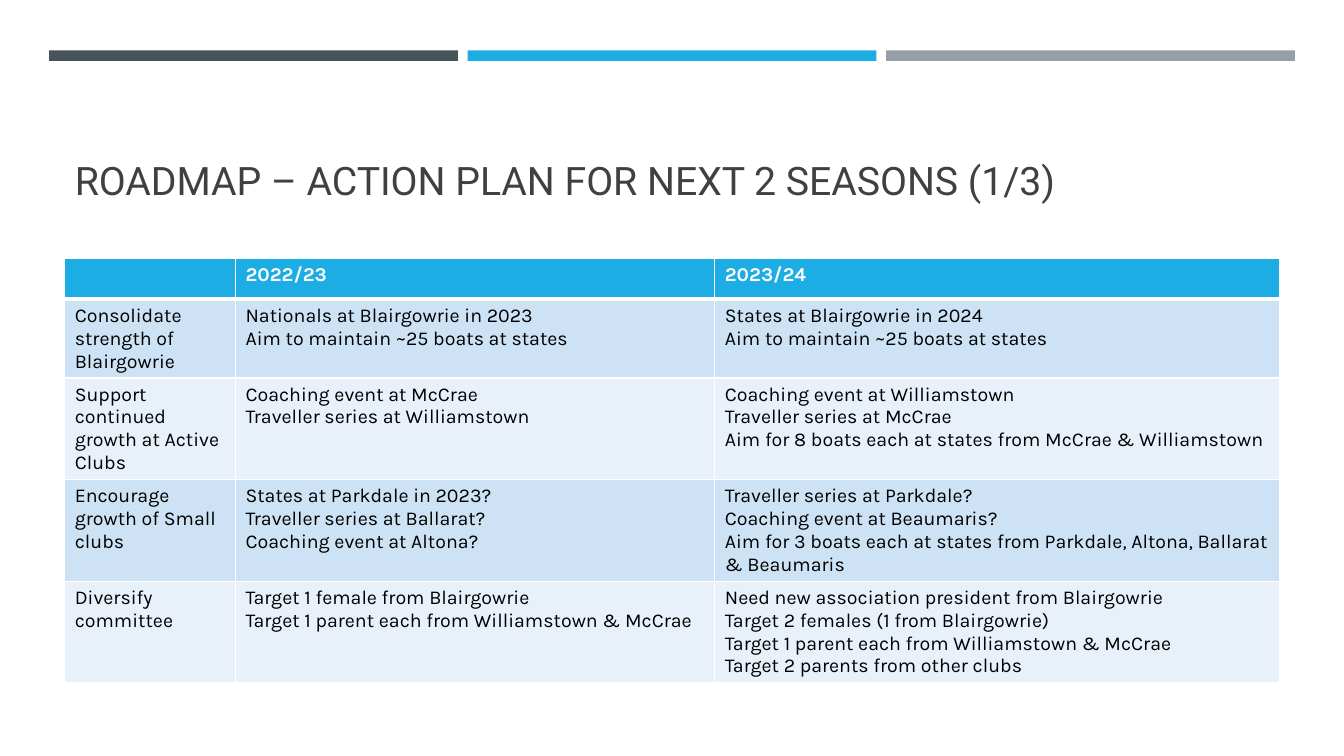
from lxml import etree
from pptx import Presentation
from pptx.dml.color import RGBColor
from pptx.enum import shapes, text
from pptx.oxml.ns import qn
from pptx.util import Pt

SLATE = RGBColor(0x46, 0x53, 0x59)
BLUE = RGBColor(0x1C, 0xAD, 0xE4)
GREY = RGBColor(0x96, 0x9F, 0xA7)
TITLE = RGBColor(0x40, 0x40, 0x40)
BAND_DARK = RGBColor(0xCD, 0xE3, 0xF5)
BAND_LIGHT = RGBColor(0xE8, 0xF1, 0xFA)
WHITE = RGBColor(0xFF, 0xFF, 0xFF)
BLACK = RGBColor(0, 0, 0)


def write(tf, content, font="Karla", size=14, color=BLACK, bold=False):
    for i, line in enumerate(content.split("\n")):
        p = tf.paragraphs[0] if i == 0 else tf.add_paragraph()
        p.alignment = text.PP_ALIGN.LEFT
        r = p.add_run()
        r.text = line
        r.font.name, r.font.size = font, Pt(size)
        r.font.color.rgb, r.font.bold = color, bold


def add_border(cell, side, width):
    ln = etree.SubElement(cell._tc.get_or_add_tcPr(), qn(f"a:{side}"), w=str(Pt(width)))
    fill = etree.SubElement(ln, qn("a:solidFill"))
    etree.SubElement(fill, qn("a:srgbClr"), val=str(WHITE))


prs = Presentation()
prs.slide_width, prs.slide_height = Pt(960), Pt(540)
s = prs.slides.add_slide(prs.slide_layouts[5])

# Three bars across the top
for i, color in enumerate((SLATE, BLUE, GREY)):
    sp = s.shapes.add_shape(shapes.MSO_SHAPE.RECTANGLE,
                            Pt(35 + 299 * i), Pt(36), Pt(292), Pt(7.5))
    sp.shadow.inherit = False
    sp.fill.solid()
    sp.fill.fore_color.rgb = color
    sp.line.fill.background()

# Title
title = s.shapes.title
title.left, title.top, title.width, title.height = Pt(46.2), Pt(55.4), Pt(868), Pt(93.6)
tf = title.text_frame
tf.word_wrap = True
tf.auto_size = text.MSO_AUTO_SIZE.NONE
tf.vertical_anchor = text.MSO_ANCHOR.BOTTOM
write(tf, "ROADMAP – ACTION PLAN FOR NEXT 2 SEASONS (1/3)", font="Roboto", size=28, color=TITLE)

# Action plan table
plan = [
    ("", "2022/23", "2023/24"),
    ("Consolidate strength of Blairgowrie",
     "Nationals at Blairgowrie in 2023\nAim to maintain ~25 boats at states",
     "States at Blairgowrie in 2024\nAim to maintain ~25 boats at states"),
    ("Support continued growth at Active Clubs",
     "Coaching event at McCrae\nTraveller series at Williamstown",
     "Coaching event at Williamstown\nTraveller series at McCrae\n"
     "Aim for 8 boats each at states from McCrae & Williamstown"),
    ("Encourage growth of Small clubs",
     "States at Parkdale in 2023?\nTraveller series at Ballarat?\nCoaching event at Altona?",
     "Traveller series at Parkdale?\nCoaching event at Beaumaris?\n"
     "Aim for 3 boats each at states from Parkdale, Altona, Ballarat & Beaumaris"),
    ("Diversify committee",
     "Target 1 female from Blairgowrie\nTarget 1 parent each from Williamstown & McCrae",
     "Need new association president from Blairgowrie\nTarget 2 females (1 from Blairgowrie)\n"
     "Target 1 parent each from Williamstown & McCrae\nTarget 2 parents from other clubs"),
]
col_widths = (122, 342.4, 403.6)
row_heights = (29.2, 56, 72.6, 72.6, 72.6)
table = s.shapes.add_table(len(plan), len(col_widths), Pt(46.2), Pt(184.6),
                           Pt(sum(col_widths)), Pt(sum(row_heights))).table
for col, width in zip(table.columns, col_widths):
    col.width = Pt(width)

for i, (row, height) in enumerate(zip(plan, row_heights)):
    table.rows[i].height = Pt(height)
    header = i == 0
    band = BLUE if header else (BAND_LIGHT, BAND_DARK)[i % 2]
    for j, content in enumerate(row):
        cell = table.cell(i, j)
        for side in ("lnL", "lnR", "lnT", "lnB"):
            thick = (i, side) in ((0, "lnB"), (1, "lnT"))
            add_border(cell, side, 3 if thick else 1)
        cell.fill.solid()
        cell.fill.fore_color.rgb = band
        write(cell.text_frame, content, color=WHITE if header else BLACK, bold=header)

prs.save("out.pptx")
